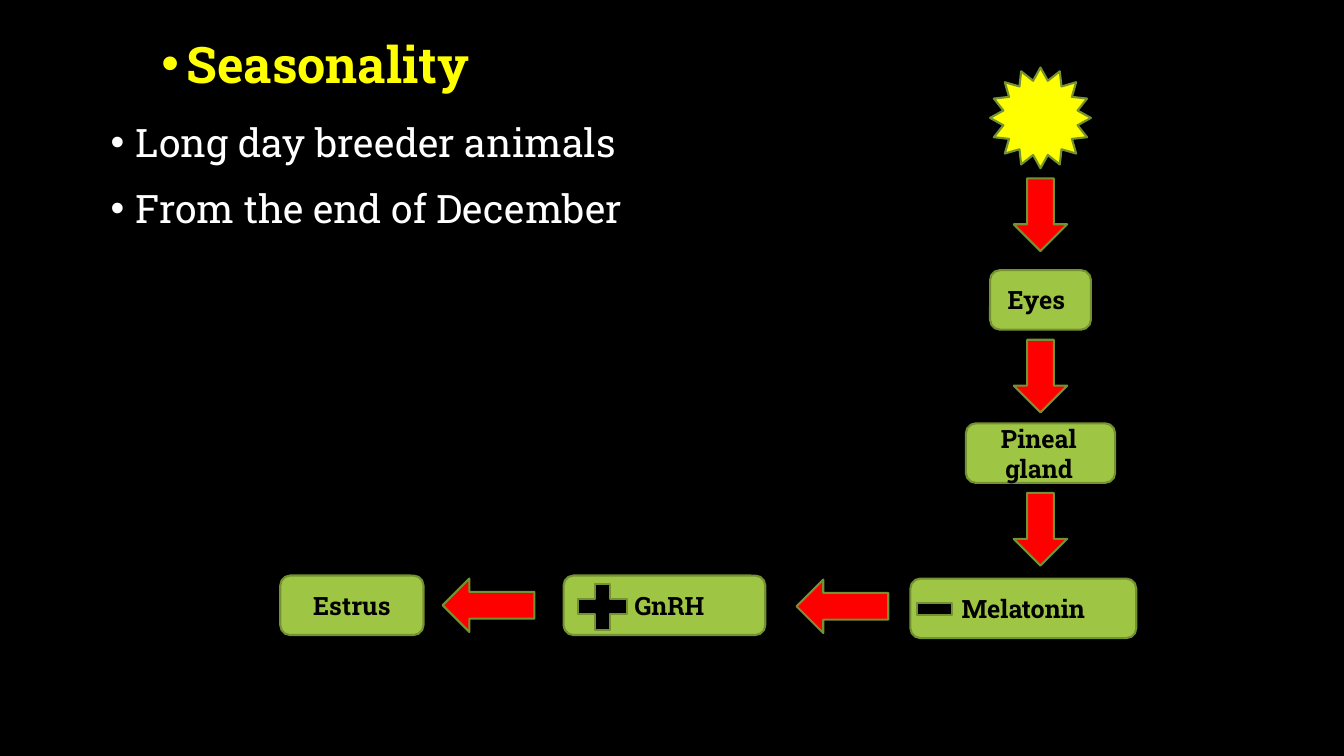
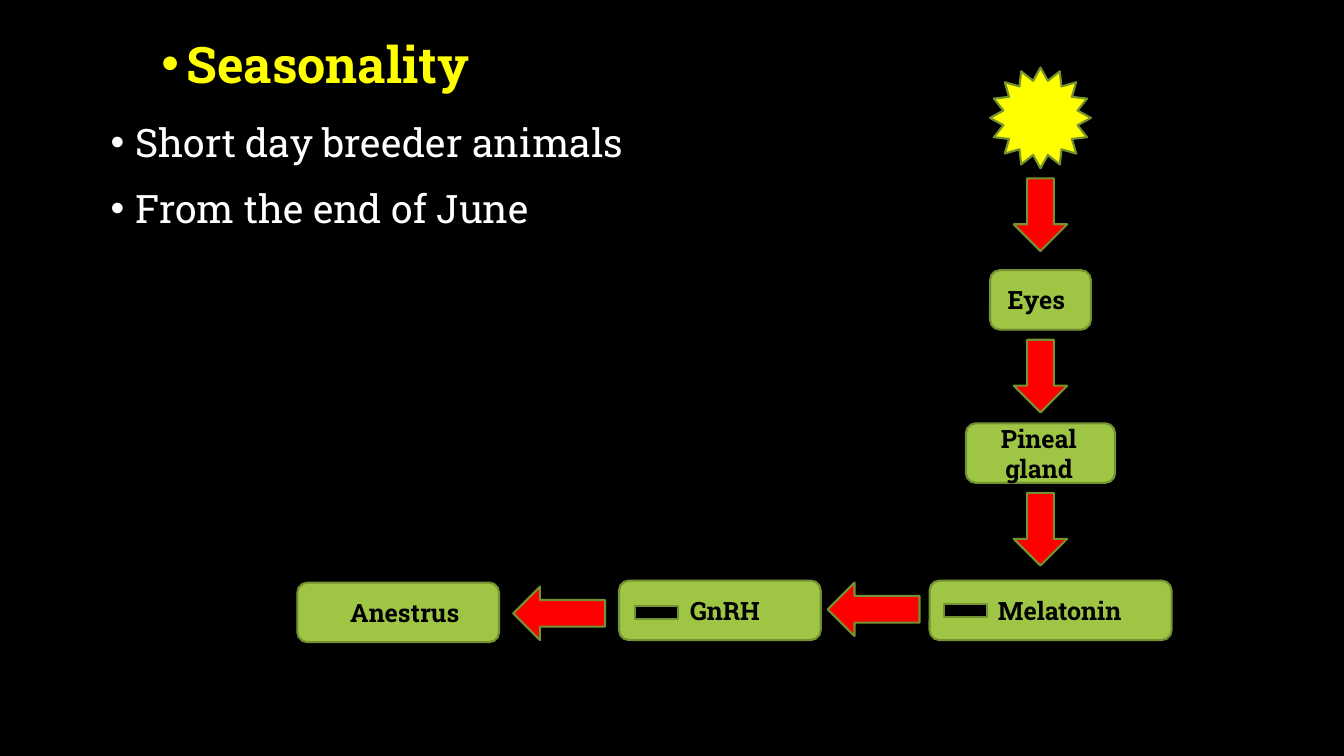
from lxml.etree import SubElement
from pptx import Presentation
from pptx.dml.color import RGBColor
from pptx.enum.shapes import MSO_SHAPE as Kind
from pptx.enum.text import MSO_ANCHOR, MSO_AUTO_SIZE, PP_ALIGN
from pptx.oxml.ns import qn
from pptx.util import Inches, Pt

FONT = "Roboto Slab"
HEX = {"black": "000000", "white": "FFFFFF", "yellow": "FFFF00",
       "red": "FF0000", "green": "9EC544", "edge": "759232"}
COLOR = {name: RGBColor.from_string(code) for name, code in HEX.items()}
MID = 10.32           # centre of the vertical chain
BOX_H = 0.59
LONG, THICK = 0.91, 0.53

# Vertical chain: top, then label, width and text shift for the boxes
DOWN = [1.77, 3.37, 4.89]
ORGANS = [("Eyes", 2.68, 1, -0.08), ("Pineal gland", 4.2, 1.48, -0.03)]

# Bottom row: boxes (label, left, top, width, text shift),
# arrows (left, top), signs (kind, left, top, width, height)
SLIDES = [
    {"points": ["Long day breeder animals", "From the end of December"],
     "boxes": [("Melatonin", 9.03, 5.74, 2.24, 0),
               ("GnRH", 5.59, 5.71, 2, 0.1),
               ("Estrus", 2.78, 5.71, 1.42, 0)],
     "arrows": [(7.9, 5.75), (4.39, 5.74)],
     "signs": [(Kind.MATH_PLUS, 5.64, 5.71, 0.67, 0.62),
               (Kind.MATH_MINUS, 9.03, 5.78, 0.48, 0.52)]},
    {"points": ["Short day breeder animals", "From the end of June"],
     "boxes": [("Melatonin", 9.22, 5.76, 2.4, 0.18),
               ("GnRH", 6.14, 5.76, 2, 0.1),
               ("Anestrus", 2.95, 5.78, 2, 0.13)],
     "arrows": [(8.21, 5.78), (5.09, 5.82)],
     "signs": [(Kind.MATH_MINUS, 6.22, 5.8, 0.58, 0.55),
               (Kind.MATH_MINUS, 9.29, 5.78, 0.58, 0.55)]},
]


def draw(slide, kind, spot, color, label="", shift=0):
    """Add an outlined shape; shift moves its label right (or left if negative)."""
    shape = slide.shapes.add_shape(kind, *[Inches(n) for n in spot])
    shape.shadow.inherit = False
    shape.fill.solid()
    shape.fill.fore_color.rgb = COLOR[color]
    shape.line.color.rgb = COLOR["edge"]
    shape.line.width = Pt(1.5)
    if label:
        frame = shape.text_frame
        frame.text = label
        frame.word_wrap = True
        frame.vertical_anchor = MSO_ANCHOR.MIDDLE
        frame.margin_left = Inches(0.1 + max(shift, 0))
        frame.margin_right = Inches(0.1 + max(-shift, 0))
        para = frame.paragraphs[0]
        para.alignment = PP_ALIGN.CENTER
        style(para, 18, "black", True)


def style(para, size, color, bold, indent=None):
    """Format a paragraph's runs; an indent in inches also gives it a bullet."""
    if indent is not None:
        para.alignment = PP_ALIGN.LEFT
        props = para._p.get_or_add_pPr()
        props.set("marL", str(Inches(indent)))
        props.set("indent", str(Inches(-0.25)))
        SubElement(props, qn("a:buFont")).set("typeface", "Arial")
        SubElement(props, qn("a:buChar")).set("char", "•")
    for run in para.runs:
        run.font.name = FONT
        run.font.size = Pt(size)
        run.font.bold = bold
        run.font.color.rgb = COLOR[color]


prs = Presentation()
prs.slide_width, prs.slide_height = Inches(13.33), Inches(7.5)
back = prs.slide_master.background.fill
back.solid()
back.fore_color.rgb = COLOR["black"]

for data in SLIDES:
    slide = prs.slides.add_slide(prs.slide_layouts[5])

    title = slide.shapes.title
    title.left, title.top = Inches(1), Inches(0.28)
    title.width, title.height = Inches(8), Inches(0.8)
    frame = title.text_frame
    frame.text = "Seasonality"
    frame.auto_size = MSO_AUTO_SIZE.NONE
    frame.vertical_anchor = MSO_ANCHOR.TOP
    style(frame.paragraphs[0], 36, "yellow", True, 0.75)

    body = slide.shapes.add_textbox(Inches(1), Inches(1.08), Inches(8), Inches(1.5))
    frame = body.text_frame
    frame.word_wrap = True
    frame.text = "\n".join(data["points"])
    for num, para in enumerate(frame.paragraphs):
        style(para, 28, "white", False, 0.25)
        para.line_spacing = 1.1
        para.space_before = Pt(10 if num else 0)

    draw(slide, Kind.STAR_16_POINT, (MID - 0.5, 0.67, 1, 1), "yellow")
    for top in DOWN:
        draw(slide, Kind.DOWN_ARROW, (MID - THICK / 2, top, THICK, 0.72), "red")
    for label, top, width, shift in ORGANS:
        draw(slide, Kind.ROUNDED_RECTANGLE, (MID - width / 2, top, width, BOX_H),
             "green", label, shift)

    for label, left, top, width, shift in data["boxes"]:
        draw(slide, Kind.ROUNDED_RECTANGLE, (left, top, width, BOX_H),
             "green", label, shift)
    for left, top in data["arrows"]:
        draw(slide, Kind.LEFT_ARROW, (left, top, LONG, THICK), "red")
    for kind, *spot in data["signs"]:
        draw(slide, kind, spot, "black")

prs.save("out.pptx")
